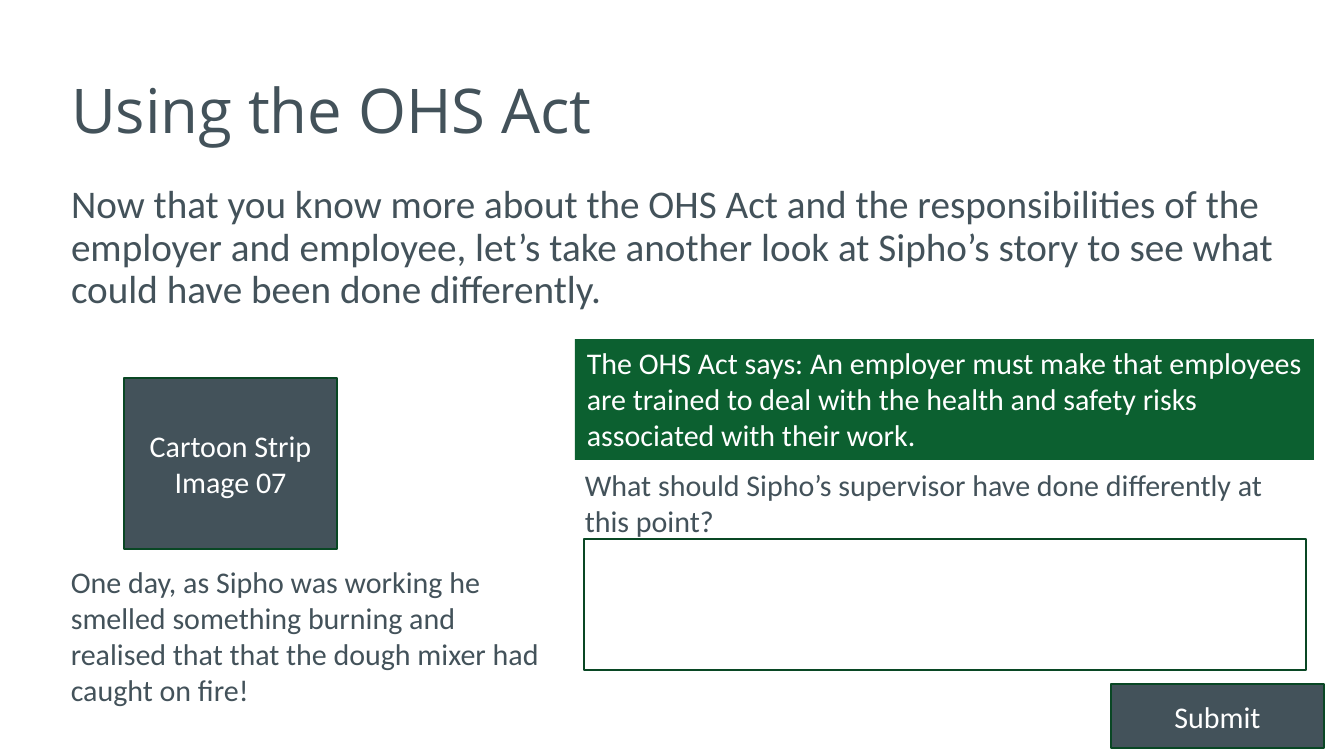
from pptx import Presentation
from pptx.dml.color import RGBColor
from pptx.enum.shapes import MSO_SHAPE
from pptx.enum.text import MSO_ANCHOR, PP_ALIGN
from pptx.util import Pt
from lxml import etree

RECTANGLE = MSO_SHAPE.RECTANGLE
TOP, MIDDLE = MSO_ANCHOR.TOP, MSO_ANCHOR.MIDDLE
LEFT, CENTER = PP_ALIGN.LEFT, PP_ALIGN.CENTER

PX = 914400 // 120
PAGE_SIZE = (1344, 756)
COLORS = {"slate": "43525A", "green": "0C6030", "edge": "094724", "white": "FFFFFF"}

TITLE = ("Using the OHS Act", (59, 41, 1159, 146))
INTRO = (
    "Now that you know more about the OHS Act and the responsibilities of the employer "
    "and employee, let’s take another look at Sipho’s story to see what could have been "
    "done differently.",
    (59, 179, 1228, 124),
)
PANELS = [
    {"text": "One day, as Sipho was working he smelled something burning and realised that "
             "that the dough mixer had caught on fire!",
     "place": (59, 558, 497, 157)},
    {"text": "Cartoon Strip Image 07", "place": (124, 378, 213, 171),
     "fill": "slate", "line": "edge", "centered": True},
    {"text": "What should Sipho’s supervisor have done differently at this point?",
     "place": (573, 461, 744, 85)},
    {"text": "Submit", "place": (1111, 684, 213, 64),
     "fill": "slate", "line": "edge", "centered": True},
    {"text": "", "place": (584, 539, 722, 131), "line": "edge"},
    {"text": "The OHS Act says: An employer must make that employees are trained to deal with "
             "the health and safety risks associated with their work.",
     "place": (575, 339, 739, 121), "fill": "green"},
]


def rgb(name):
    return RGBColor.from_string(COLORS[name])


def move(shape, place):
    shape.left, shape.top, shape.width, shape.height = (value * PX for value in place)


def write(shape, text, size=18, font="Calibri", color="slate", align=LEFT,
          anchor=TOP, spacing=1.0, before=0):
    frame = shape.text_frame
    frame.word_wrap = True
    frame.vertical_anchor = anchor
    para = frame.paragraphs[0]
    para.alignment = align
    para.line_spacing = spacing
    para.space_before = Pt(before)
    span = para.add_run()
    span.text = text
    span.font.size = Pt(size)
    span.font.name = font
    span.font.color.rgb = rgb(color)
    return para


def remove_bullet(para):
    properties = para._p.get_or_add_pPr()
    properties.set("marL", "0")
    properties.set("indent", "0")
    namespace = properties.nsmap["a"]
    etree.SubElement(properties, f"{{{namespace}}}buNone")


def add_panel(page, text, place, fill=None, line=None, centered=False):
    area = [value * PX for value in place]
    if not fill and not line:
        write(page.shapes.add_textbox(*area), text)
        return
    box = page.shapes.add_shape(RECTANGLE, *area)
    box.shadow.inherit = False
    if fill:
        box.fill.solid()
        box.fill.fore_color.rgb = rgb(fill)
    else:
        box.fill.background()
    if line:
        box.line.color.rgb = rgb(line)
        box.line.width = Pt(1)
    else:
        box.line.fill.background()
    if text:
        write(box, text, color="white", align=CENTER if centered else LEFT,
              anchor=MIDDLE if centered else TOP)


def main():
    deck = Presentation()
    deck.slide_width, deck.slide_height = (value * PX for value in PAGE_SIZE)
    page = deck.slides.add_slide(deck.slide_layouts[1])
    title, intro = page.placeholders

    move(title, TITLE[1])
    write(title, TITLE[0], size=37, font="Open Sans", anchor=MIDDLE, spacing=0.9)
    move(intro, INTRO[1])
    remove_bullet(write(intro, INTRO[0], size=23.5, spacing=0.9, before=8.4))

    for panel in PANELS:
        add_panel(page, **panel)
    deck.save("out.pptx")


if __name__ == "__main__":
    main()
